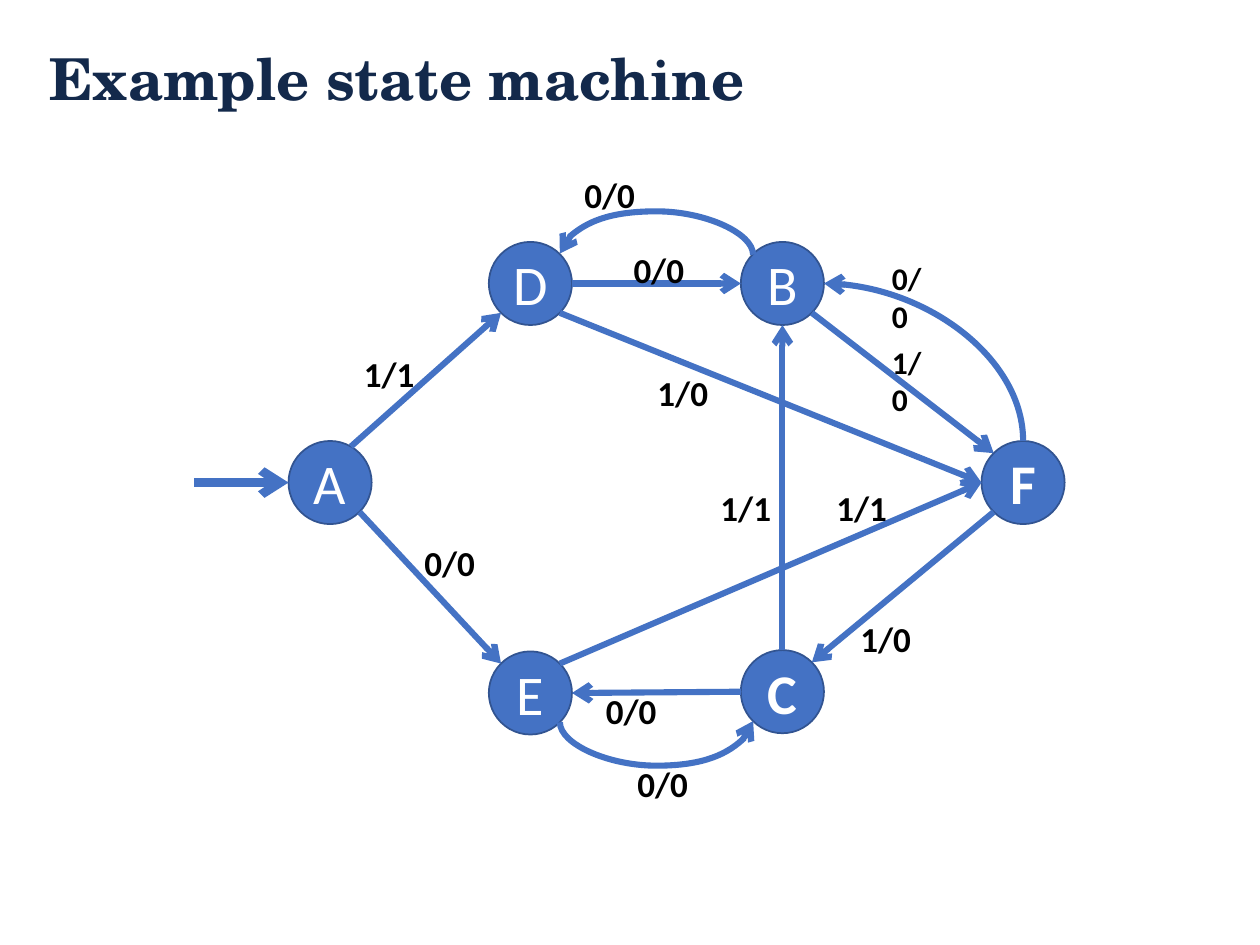
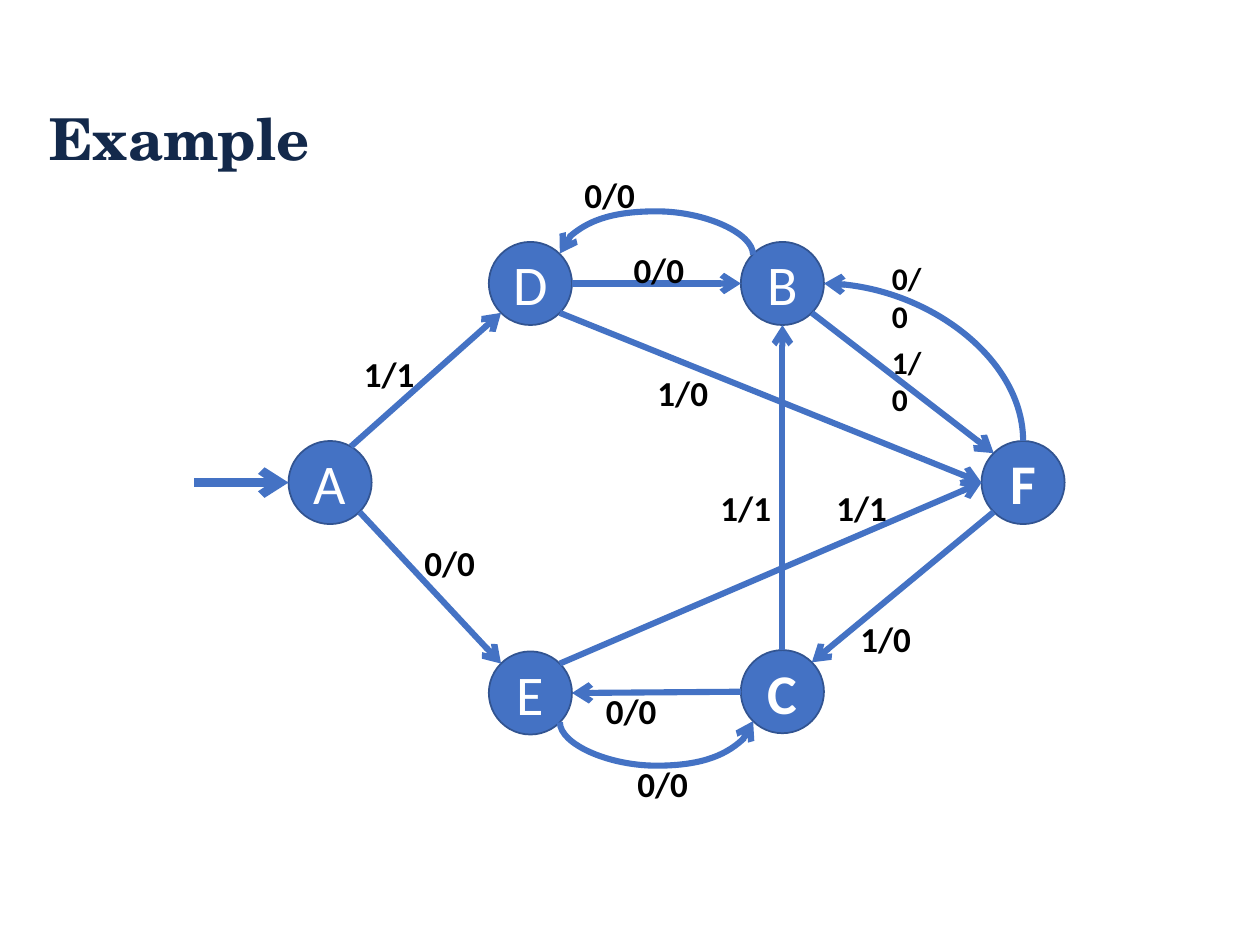
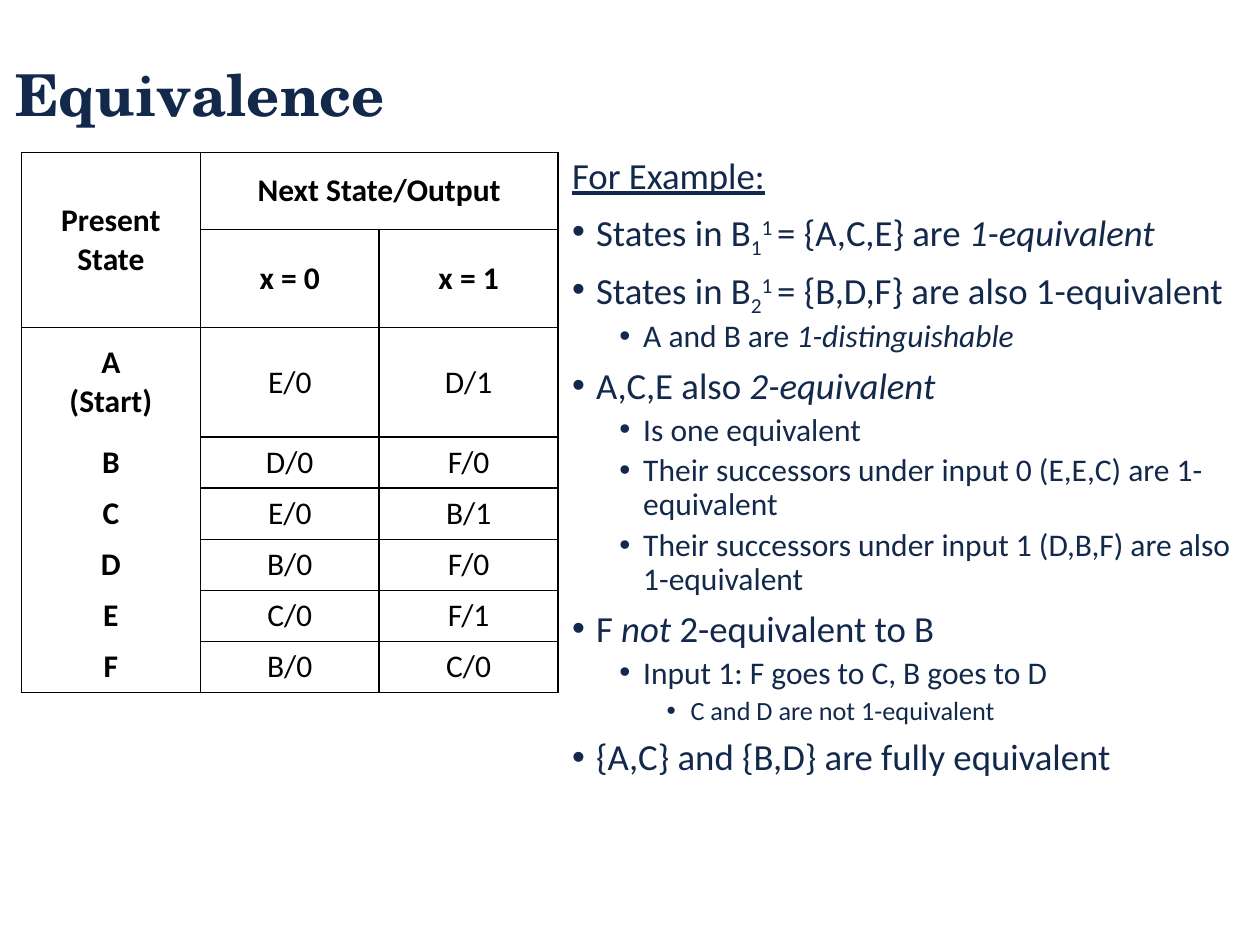
from dataclasses import dataclass
from math import cos, radians, sin

from lxml.etree import SubElement
from pptx import Presentation
from pptx.dml.color import RGBColor
from pptx.enum.shapes import MSO_CONNECTOR as LINE, MSO_SHAPE as SHAPE
from pptx.enum.text import MSO_ANCHOR as ANCHOR, MSO_AUTO_SIZE as FIT, PP_ALIGN as ALIGN
from pptx.oxml.ns import qn
from pptx.util import Inches, Pt


@dataclass(frozen=True)
class Theme:
    heading: str = "TeX Gyre Schola"
    body: str = "Calibri"
    navy: str = "13294B"
    blue: str = "4472C4"
    outline: str = "325491"
    black: str = "000000"
    white: str = "FFFFFF"
    title_size: int = 33
    node_size: int = 32
    label_size: int = 20
    small_label_size: int = 18
    cell_size: int = 18
    list_sizes: tuple = (21, 18, 15)
    list_gaps: tuple = (7.5, 3.8, 3.8)


T = Theme()
TITLE_ONLY, TITLE_AND_BODY = 5, 1
RADIUS = 0.33
BULGE = 0.35
MIN_DEPTH = 0.01

# Centre of each state, and whether its letter is bold
LEFT, MID_LEFT, MID_RIGHT, RIGHT = 2.62, 4.21, 6.21, 8.12
TOP, MIDDLE, BOTTOM = 2.25, 3.83, 5.5
STATES = {
    "A": (LEFT, MIDDLE, False),
    "D": (MID_LEFT, TOP, False),
    "E": (MID_LEFT, BOTTOM, False),
    "B": (MID_RIGHT, TOP, False),
    "C": (MID_RIGHT, BOTTOM - 0.01, True),
    "F": (RIGHT, MIDDLE, True),
}

# State and angle on its rim (counter-clockwise from east), at both ends
STRAIGHT_EDGES = [
    ("A", 60, "D", 225), ("A", 315, "E", 135), ("D", 0, "B", 180),
    ("C", 180, "E", 0), ("C", 90, "B", 270), ("F", 225, "C", 45),
    ("D", 315, "F", 180), ("B", 315, "F", 135), ("E", 45, "F", 180),
]

LABELS = [
    ("0/0", 3.27, 4.25), ("1/1", 2.79, 2.75), ("0/0", 4.93, 1.92),
    ("0/0", 4.54, 1.33), ("0/0", 4.96, 6.0), ("0/0", 4.71, 5.42),
    ("1/0", 6.73, 4.85), ("1/1", 6.54, 3.81), ("1/0", 5.12, 2.9),
    ("1/1", 5.62, 3.81),
]
SMALL_LABELS = [("1/0", 6.98, 2.67), ("0/0", 6.98, 2.01)]

STATE_TABLE = [
    ("Present State", "Next State/Output", ""),
    ("", "x = 0", "x = 1"),
    ("A (Start)", "E/0", "D/1"),
    ("B", "D/0", "F/0"),
    ("C", "E/0", "B/1"),
    ("D", "B/0", "F/0"),
    ("E", "C/0", "F/1"),
    ("F", "B/0", "C/0"),
]
HEADER_ROWS = 2
ROW_HEIGHTS = [0.61, 0.78, 0.87] + [0.4] * 5

# Level and runs; a run is text or (text, style)
EQUIVALENCE_LIST = [
    (0, ["States in B", ("1", "sub"), ("1 ", "sup"), "= {A,C,E} are ",
         ("1-equivalent", "italic")]),
    (0, ["States in B", ("2", "sub"), ("1 ", "sup"),
         "= {B,D,F} are also 1-equivalent"]),
    (1, ["A and B are ", ("1-distinguishable", "italic")]),
    (0, ["A,C,E also ", ("2-equivalent", "italic")]),
    (1, ["Is one equivalent"]),
    (1, ["Their successors under input 0 (E,E,C) are 1-equivalent"]),
    (1, ["Their successors under input 1 (D,B,F) are also 1-equivalent"]),
    (0, ["F ", ("not ", "italic"), "2-equivalent to B"]),
    (1, ["Input 1: F goes to C, B goes to D"]),
    (2, ["C and D are not 1-equivalent"]),
    (0, ["{A,C} and {B,D} are fully equivalent"]),
]


def rgb(color):
    return RGBColor.from_string(color)


def inches(*values):
    return [Inches(v) for v in values]


def place(sp, *box):
    sp.left, sp.top, sp.width, sp.height = inches(*box)


def style(p, size, color, bold=False, face=T.body):
    f = p.font
    f.name, f.size, f.bold = face, Pt(size), bold
    f.color.rgb = rgb(color)


def add_slide(prs, layout, title, left, top):
    slide = prs.slides.add_slide(prs.slide_layouts[layout])
    sp = slide.shapes.title
    place(sp, left, top, 9.03, 1.45)
    tf = sp.text_frame
    tf.text, tf.vertical_anchor = title, ANCHOR.MIDDLE
    p = tf.paragraphs[0]
    p.alignment, p.line_spacing = ALIGN.LEFT, 0.9
    style(p, T.title_size, T.navy, True, T.heading)
    return slide


def add_state(slide, name):
    x, y, bold = STATES[name]
    sp = slide.shapes.add_shape(
        SHAPE.OVAL, *inches(x - RADIUS, y - RADIUS, 2 * RADIUS, 2 * RADIUS))
    sp.shadow.inherit = False
    sp.fill.solid()
    sp.fill.fore_color.rgb = rgb(T.blue)
    sp.line.color.rgb, sp.line.width = rgb(T.outline), Pt(1)
    tf = sp.text_frame
    tf.margin_left = tf.margin_right = tf.margin_top = tf.margin_bottom = 0
    tf.text, tf.vertical_anchor = name, ANCHOR.MIDDLE
    p = tf.paragraphs[0]
    p.alignment = ALIGN.CENTER
    style(p, T.node_size, T.white, bold)
    return sp


def rim_point(name, angle):
    x, y, _ = STATES[name]
    a = radians(angle)
    return x + RADIUS * cos(a), y - RADIUS * sin(a)


def add_arrow(slide, start, end, kind=LINE.STRAIGHT, width=3.5):
    cx = slide.shapes.add_connector(kind, *inches(*start, *end))
    cx.line.color.rgb, cx.line.width = rgb(T.blue), Pt(width)
    SubElement(cx.line._get_or_add_ln(), qn("a:tailEnd"), type="arrow")
    SubElement(cx._element.spPr, qn("a:effectLst"))
    return cx


def glue(cx, states, source, out, target, into):
    """Tie the ends to the states where they meet one of the eight rim sites."""
    props = cx._element.find(".//" + qn("p:cNvCxnSpPr"))
    for tag, name, angle in (("a:stCxn", source, out), ("a:endCxn", target, into)):
        if angle % 45 == 0:
            SubElement(props, qn(tag), id=str(states[name].shape_id),
                       idx=str((angle - 90) % 360 // 45))


def add_edge(slide, states, *ends):
    source, out, target, into = ends
    cx = add_arrow(slide, rim_point(source, out), rim_point(target, into))
    glue(cx, states, *ends)


def add_curve(slide, states, ends, preset, turn, flips, bulge=None):
    """Arrow that leaves vertically: its box is turned by a quarter."""
    source, out, target, into = ends
    (x1, y1), (x2, y2) = start, end = rim_point(source, out), rim_point(target, into)
    cx = add_arrow(slide, start, end, LINE.CURVE)
    glue(cx, states, *ends)
    w, h = max(abs(y2 - y1), MIN_DEPTH), abs(x2 - x1)
    place(cx, (x1 + x2 - w) / 2, (y1 + y2 - h) / 2, w, h)
    xfrm = cx._element.spPr.find(qn("a:xfrm"))
    for flip in ("flipH", "flipV"):
        xfrm.set(flip, "1" if flip in flips else "0")
    xfrm.set("rot", str(turn * 60000))
    geom = cx._element.spPr.find(qn("a:prstGeom"))
    geom.set("prst", preset)
    if bulge:
        SubElement(geom.find(qn("a:avLst")), qn("a:gd"), name="adj1",
                   fmla=f"val {round(bulge / w * 100000)}")


def add_label(slide, text, left, top, size):
    sp = slide.shapes.add_textbox(*inches(left, top, 0.03 * size, 0.022 * size))
    tf = sp.text_frame
    tf.text, tf.word_wrap, tf.auto_size = text, False, FIT.SHAPE_TO_FIT_TEXT
    style(tf.paragraphs[0], size, T.black, True)


def add_state_machine(slide):
    states = {name: add_state(slide, name) for name in STATES}
    add_arrow(slide, (LEFT - RADIUS - 0.75, MIDDLE), rim_point("A", 180), width=5)
    for edge in STRAIGHT_EDGES:
        add_edge(slide, states, *edge)
    add_curve(slide, states, ("F", 90, "B", 0), "curvedConnector2", 270, ["flipV"])
    add_curve(slide, states, ("B", 135, "D", 45), "curvedConnector3", 270,
              ["flipV"], BULGE)
    add_curve(slide, states, ("E", 225 + 90, "C", 225), "curvedConnector3", 90,
              ["flipH", "flipV"], -BULGE)
    for labels, size in ((LABELS, T.label_size), (SMALL_LABELS, T.small_label_size)):
        for label in labels:
            add_label(slide, *label, size)


def set_borders(cell, hidden):
    tc_pr = cell._tc.get_or_add_tcPr()
    for side in "LRTB":
        ln = SubElement(tc_pr, qn(f"a:ln{side}"), w=str(Pt(1)))
        if side in hidden:
            SubElement(ln, qn("a:noFill"))
        else:
            SubElement(SubElement(ln, qn("a:solidFill")), qn("a:srgbClr"), val=T.black)


def add_state_table(slide):
    last = len(STATE_TABLE) - 1
    table = slide.shapes.add_table(
        last + 1, 3, *inches(0.17, 1.21, 4.27, sum(ROW_HEIGHTS))).table
    table.first_row = table.horz_banding = False
    for column in table.columns:
        column.width = Inches(1.42)
    for r, (values, height) in enumerate(zip(STATE_TABLE, ROW_HEIGHTS)):
        table.rows[r].height = Inches(height)
        for c, value in enumerate(values):
            cell = table.cell(r, c)
            hidden = ""
            if c == 0 and r >= HEADER_ROWS:
                hidden = ("T" if r > HEADER_ROWS else "") + ("B" if r < last else "")
            set_borders(cell, hidden)
            cell.fill.background()
            cell.vertical_anchor = ANCHOR.MIDDLE
            cell.margin_left = cell.margin_right = Inches(0.3)
            cell.text = value
            p = cell.text_frame.paragraphs[0]
            p.alignment = ALIGN.CENTER
            style(p, T.cell_size, T.black, c == 0 or r < HEADER_ROWS)
    table.cell(0, 0).merge(table.cell(1, 0))
    table.cell(0, 1).merge(table.cell(0, 2))


def set_bullet(p, level, char=None):
    p_pr = p._p.get_or_add_pPr()
    hang = Inches(0.19) if char else 0
    p_pr.set("marL", str(Inches(0.375 * level) + hang))
    p_pr.set("indent", str(-hang))
    if char:
        SubElement(p_pr, qn("a:buFont"), typeface="Arial")
        SubElement(p_pr, qn("a:buChar"), char=char)
    else:
        SubElement(p_pr, qn("a:buNone"))


def add_run(p, run):
    text, look = (run, "") if isinstance(run, str) else run
    r = p.add_run()
    r.text = text
    if look == "italic":
        r.font.italic = True
    elif look:
        shift = {"sub": "-25000", "sup": "30000"}[look]
        r._r.get_or_add_rPr().set("baseline", shift)


def fill_list(sp, heading, items):
    place(sp, 4.44, 1.2, 5.58, 5.58)
    tf = sp.text_frame
    tf.auto_size, tf.word_wrap = FIT.NONE, True
    p = tf.paragraphs[0]
    p.space_before, p.line_spacing = Pt(0), 0.9
    set_bullet(p, 0)
    add_run(p, heading)
    style(p, T.list_sizes[0], T.navy)
    p.font.underline = True
    for level, runs in items:
        p = tf.add_paragraph()
        p.level, p.line_spacing = level, 0.9
        p.space_before = Pt(T.list_gaps[level])
        set_bullet(p, level, "•")
        for run in runs:
            add_run(p, run)
        style(p, T.list_sizes[level], T.navy)


def main():
    prs = Presentation()
    prs.slide_width, prs.slide_height = inches(10, 7.5)
    add_state_machine(add_slide(prs, TITLE_ONLY, "Example state machine", 0.29, -0.08))
    add_state_machine(add_slide(prs, TITLE_ONLY, "Example", 0.29, 0.4))
    slide = add_slide(prs, TITLE_AND_BODY, "Equivalence", 0.02, 0.05)
    add_state_table(slide)
    fill_list(slide.placeholders[1], "For Example:", EQUIVALENCE_LIST)
    prs.save("out.pptx")


if __name__ == "__main__":
    main()
